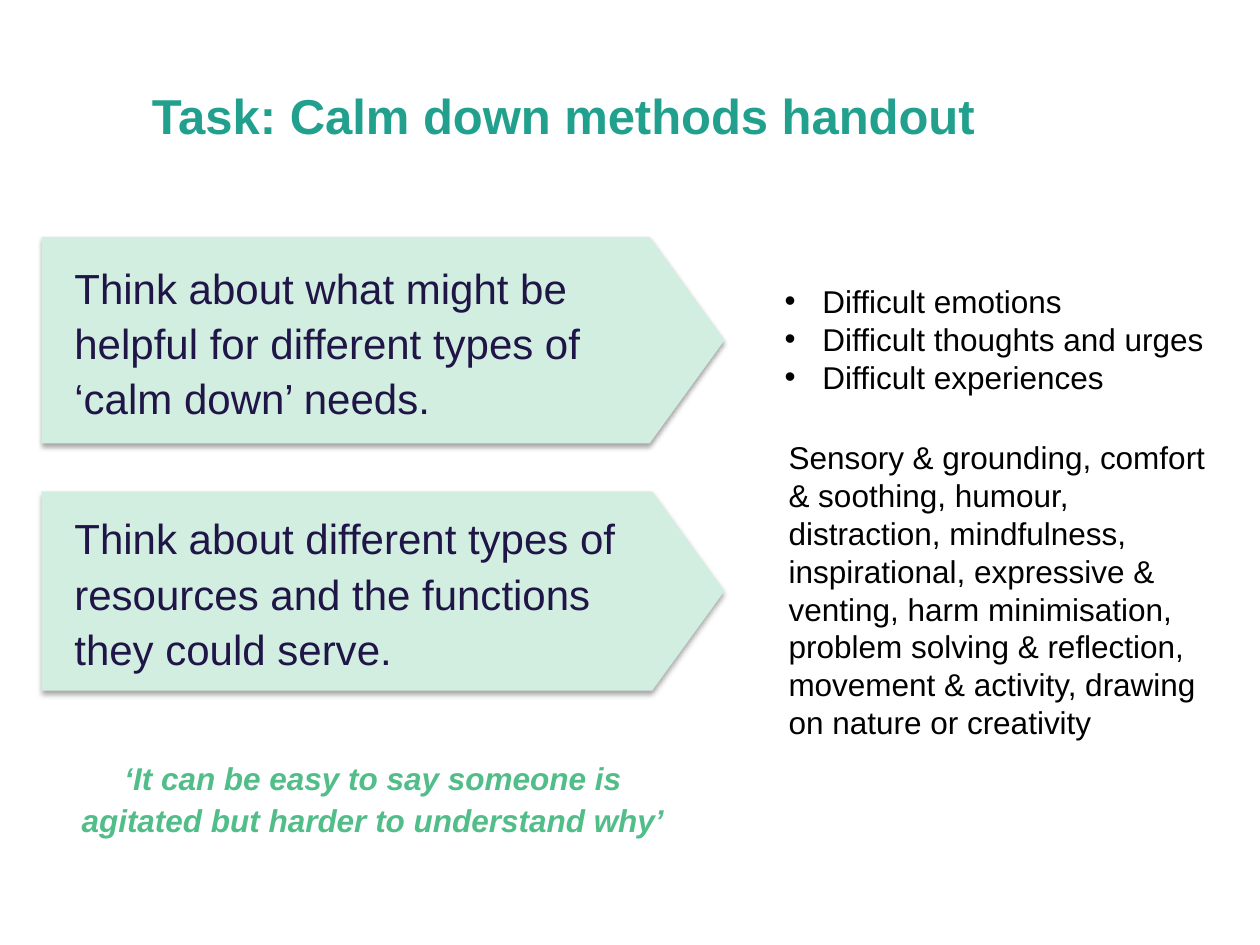
from lxml.etree import SubElement
from pptx import Presentation
from pptx.dml.color import RGBColor
from pptx.enum.shapes import MSO_SHAPE
from pptx.enum.text import MSO_ANCHOR, PP_ALIGN
from pptx.oxml.ns import qn
from pptx.util import Pt


def color(value):
    return RGBColor.from_string(value)


def assign(target, values):
    for name, value in values.items():
        setattr(target, name, value)


class HandoutSlide:
    TEAL, GREEN, MINT, NAVY, BLACK = "21A18D", "51BD89", "D2EEE1", "201547", "000000"

    def __init__(self, deck):
        self.slide = deck.slides.add_slide(deck.slide_layouts[5])

    def fill_text(self, shape, lines, size, ink, insets=(0, 0, 0, 0), anchor=MSO_ANCHOR.MIDDLE,
                  bullet=None, paragraph_format=None, font_format=None):
        frame = shape.text_frame
        left, top, right, bottom = map(Pt, insets)
        assign(frame, {"word_wrap": True, "vertical_anchor": anchor, "margin_left": left,
                       "margin_top": top, "margin_right": right, "margin_bottom": bottom})
        frame.text = "\n".join(lines)
        for paragraph in frame.paragraphs:
            assign(paragraph, {"alignment": PP_ALIGN.LEFT, **(paragraph_format or {})})
            if bullet:
                properties = paragraph._p.get_or_add_pPr()
                properties.set("marL", str(Pt(28)))
                properties.set("indent", str(Pt(-21.6)))
                SubElement(properties, qn("a:buFont"), typeface="Arial")
                SubElement(properties, qn("a:buChar"), char=bullet)
            for run in paragraph.runs:
                assign(run.font, {"name": "Arial", "size": Pt(size), **(font_format or {})})
                run.font.color.rgb = color(ink)

    def title(self, box, wording):
        heading = self.slide.shapes.title
        assign(heading, dict(zip(("left", "top", "width", "height"), map(Pt, box))))
        self.fill_text(heading, [wording], 28, self.TEAL,
                       paragraph_format={"alignment": PP_ALIGN.CENTER, "line_spacing": 1.1},
                       font_format={"bold": True})

    def arrow(self, box, wording):
        arrow = self.slide.shapes.add_shape(MSO_SHAPE.PENTAGON, *map(Pt, box))
        arrow.adjustments[0] = 0.363
        arrow.fill.solid()
        arrow.fill.fore_color.rgb = color(self.MINT)
        arrow.line.fill.background()
        arrow.shadow.inherit = False
        effects = arrow._element.spPr.find(qn("a:effectLst"))
        shadow = SubElement(effects, qn("a:outerShdw"), blurRad=str(Pt(3.1)),
                            dist=str(Pt(1.8)), dir="5400000", rotWithShape="0")
        tint = SubElement(shadow, qn("a:srgbClr"), val=self.BLACK)
        SubElement(tint, qn("a:alpha"), val="35000")
        self.fill_text(arrow, [wording], 24, self.NAVY, insets=(18.7, 0, 9, 0),
                       paragraph_format={"line_spacing": 1.1})

    def quote(self, box, wording):
        self.fill_text(self.slide.shapes.add_textbox(*map(Pt, box)), [wording], 18, self.GREEN,
                       paragraph_format={"alignment": PP_ALIGN.CENTER, "line_spacing": 1.1},
                       font_format={"bold": True, "italic": True})

    def note(self, box, lines, bullet=None):
        self.fill_text(self.slide.shapes.add_textbox(*map(Pt, box)), lines, 18, self.BLACK,
                       insets=(7.2, 3.6, 7.2, 3.6), anchor=MSO_ANCHOR.TOP, bullet=bullet)


def main():
    deck = Presentation()
    assign(deck, {"slide_width": Pt(720), "slide_height": Pt(540)})
    handout = HandoutSlide(deck)
    handout.title((42.5, 21.6, 566.6, 85), "Task: Calm down methods handout ")
    handout.arrow((23.8, 135.4, 390.2, 118),
                  "Think about what might be helpful for different types of ‘calm down’ needs.")
    handout.arrow((23.8, 280.8, 390.2, 113.8),
                  "Think about different types of resources and the functions they could serve.")
    handout.quote((42.5, 432, 341.3, 47),
                  "‘It can be easy to say someone is agitated but harder to understand why’")
    handout.note((434.9, 157.7, 265.7, 72.7),
                 ["Difficult emotions", "Difficult thoughts and urges", "Difficult experiences"],
                 bullet="•")
    handout.note((443.5, 247, 265.7, 181.4),
                 ["Sensory & grounding, comfort & soothing, humour, distraction, mindfulness, "
                  "inspirational, expressive & venting, harm minimisation, problem solving & "
                  "reflection, movement & activity, drawing on nature or creativity"])
    deck.save("out.pptx")


if __name__ == "__main__":
    main()
